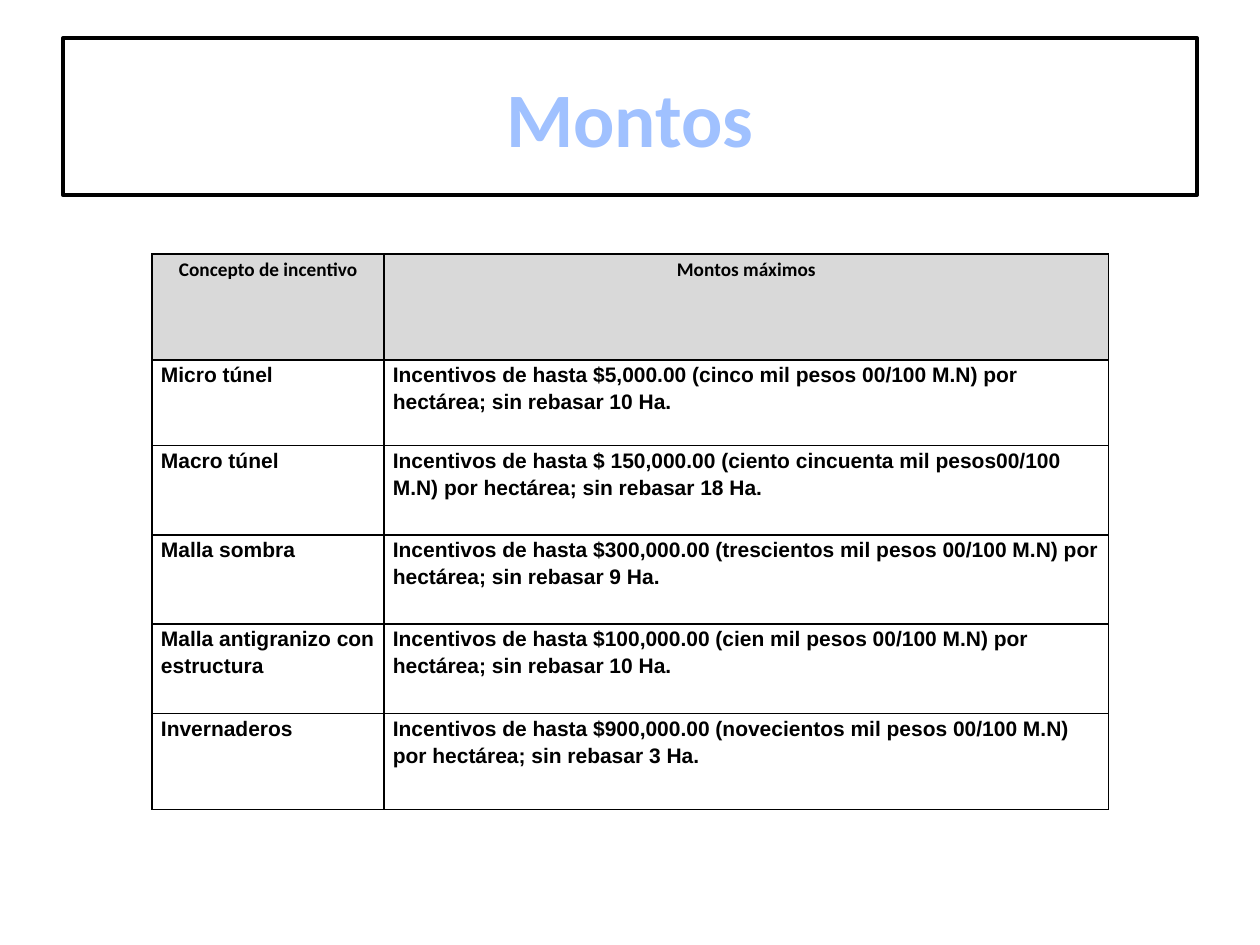
from dataclasses import dataclass

import pptx
import pptx.dml.color
import pptx.enum.shapes
import pptx.enum.text
import pptx.oxml.ns
import pptx.util
from lxml import etree

Pt = pptx.util.Pt
RGBColor = pptx.dml.color.RGBColor
PP_ALIGN = pptx.enum.text.PP_ALIGN
MSO_ANCHOR = pptx.enum.text.MSO_ANCHOR
qn = pptx.oxml.ns.qn

BLACK = RGBColor(0x00, 0x00, 0x00)
WHITE = RGBColor(0xFF, 0xFF, 0xFF)
GRAY = RGBColor(0xD9, 0xD9, 0xD9)
BLUE = RGBColor(0xA0, 0xC1, 0xFF)


@dataclass
class Row:
    concept: str
    amount: str
    height: float
    header: bool = False


ROWS = [
    Row("Concepto de incentivo", "Montos máximos", 60.5, header=True),
    Row("Micro túnel",
        "Incentivos de hasta $5,000.00 (cinco mil pesos 00/100 M.N) por hectárea; sin rebasar 10 Ha.",
        49),
    Row("Macro túnel",
        "Incentivos de hasta $ 150,000.00 (ciento cincuenta mil pesos00/100 M.N) "
        "por hectárea; sin rebasar 18 Ha.", 51),
    Row("Malla sombra",
        "Incentivos de hasta $300,000.00 (trescientos mil pesos 00/100 M.N) "
        "por hectárea; sin rebasar 9 Ha.", 51),
    Row("Malla antigranizo con estructura",
        "Incentivos de hasta $100,000.00 (cien mil pesos 00/100 M.N) por hectárea; sin rebasar 10 Ha.",
        51),
    Row("Invernaderos",
        "Incentivos de hasta $900,000.00 (novecientos mil pesos 00/100 M.N) "
        "por hectárea; sin rebasar 3 Ha.", 55),
]
COL_WIDTHS = (132.5, 414)


def write(tf, text: str, *, size: float, font: str, color: RGBColor = BLACK,
          align=PP_ALIGN.LEFT, spacing: float = 1.0) -> None:
    p = tf.paragraphs[0]
    p.alignment = align
    p.line_spacing = spacing
    r = p.add_run()
    r.text = text
    r.font.size = Pt(size)
    r.font.name = font
    r.font.bold = True
    r.font.color.rgb = color


def add_borders(cell, color: RGBColor, width: float) -> None:
    tc_pr = cell._tc.get_or_add_tcPr()
    for side in ("a:lnL", "a:lnR", "a:lnT", "a:lnB"):
        ln = etree.SubElement(tc_pr, qn(side), w=str(Pt(width)))
        fill = etree.SubElement(ln, qn("a:solidFill"))
        etree.SubElement(fill, qn("a:srgbClr"), val=str(color))


def fill_cell(cell, text: str, header: bool) -> None:
    cell.margin_left = cell.margin_right = Pt(5)
    cell.margin_top = cell.margin_bottom = Pt(0)
    add_borders(cell, BLACK, 1)
    if header:
        cell.fill.solid()
        cell.fill.fore_color.rgb = GRAY
        write(cell.text_frame, text, size=11, font="Calibri",
              align=PP_ALIGN.CENTER, spacing=1.15)
    else:
        cell.fill.background()
        write(cell.text_frame, text, size=12, font="Arial", spacing=1.15)


def add_title(s, text: str) -> None:
    sp = s.shapes.add_shape(pptx.enum.shapes.MSO_SHAPE.RECTANGLE,
                            Pt(36), Pt(21.6), Pt(648), Pt(90))
    sp.shadow.inherit = False
    sp.fill.solid()
    sp.fill.fore_color.rgb = WHITE
    sp.line.color.rgb = BLACK
    sp.line.width = Pt(2)
    tf = sp.text_frame
    tf.word_wrap = True
    tf.vertical_anchor = MSO_ANCHOR.MIDDLE
    write(tf, text, size=44, font="Calibri", color=BLUE, align=PP_ALIGN.CENTER)


def add_amounts(s, rows: list[Row]) -> None:
    table = s.shapes.add_table(
        len(rows), len(COL_WIDTHS), Pt(87), Pt(145.2),
        Pt(sum(COL_WIDTHS)), Pt(sum(row.height for row in rows))).table
    table.horz_banding = False
    for col, width in zip(table.columns, COL_WIDTHS):
        col.width = Pt(width)
    for i, row in enumerate(rows):
        table.rows[i].height = Pt(row.height)
        for j, text in enumerate((row.concept, row.amount)):
            fill_cell(table.cell(i, j), text, row.header)


def main() -> None:
    prs = pptx.Presentation()
    prs.slide_width, prs.slide_height = Pt(720), Pt(540)
    s = prs.slides.add_slide(prs.slide_layouts[6])

    # Title box
    add_title(s, "Montos")

    # Table of maximum amounts
    add_amounts(s, ROWS)

    prs.save("out.pptx")


if __name__ == "__main__":
    main()
